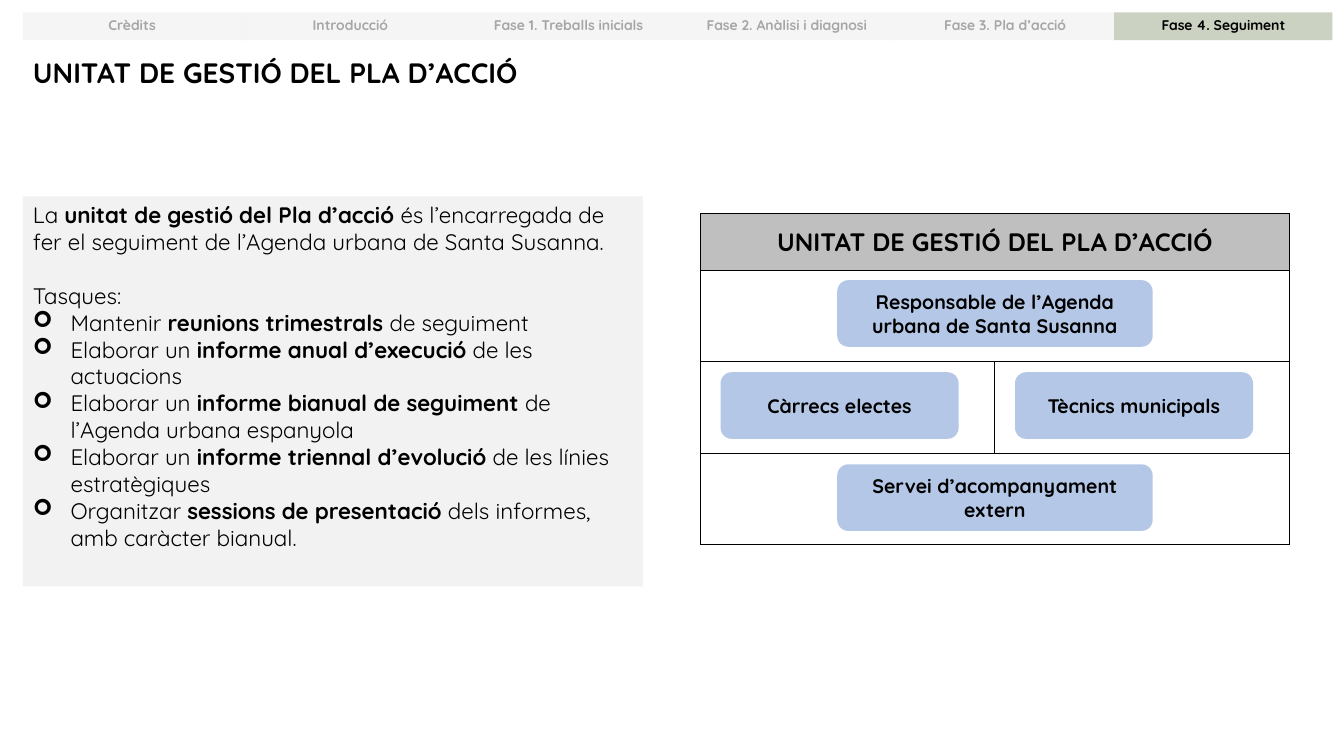
from dataclasses import dataclass

from lxml import etree
from pptx import Presentation
from pptx.dml.color import RGBColor
from pptx.enum.shapes import MSO_SHAPE
from pptx.enum.text import MSO_ANCHOR, PP_ALIGN
from pptx.oxml.ns import qn
from pptx.util import Cm, Pt

RECT, ROUND = MSO_SHAPE.RECTANGLE, MSO_SHAPE.ROUNDED_RECTANGLE
LEFT, CENTER = PP_ALIGN.LEFT, PP_ALIGN.CENTER
TOP, MIDDLE = MSO_ANCHOR.TOP, MSO_ANCHOR.MIDDLE
FONT = "Quicksand"
COLORS = {
    "text": "000000",
    "muted": "A6A6A6",
    "tab": "D9D9D9",
    "active": "374E0A",
    "panel": "F2F2F2",
    "head": "BFBFBF",
    "chip": "B4C7E7",
}
TITLE = "UNITAT DE GESTIÓ DEL PLA D’ACCIÓ"
TABS = (
    "Crèdits",
    "Introducció",
    "Fase 1. Treballs inicials",
    "Fase 2. Anàlisi i diagnosi",
    "Fase 3. Pla d’acció",
    "Fase 4. Seguiment",
)
MARGIN = 0.58
TAB_WIDTH = 5.5
TABLE_LEFT, TABLE_TOP = 17.65, 5.39
COL_WIDTH, HEAD_HEIGHT, ROW_HEIGHT = 7.42, 1.43, 2.3
CHIP_TOP, CHIP_STEP, CHIP_HEIGHT = 7.06, 2.32, 1.68


@dataclass
class Task:
    verb: str
    key: str
    rest: str


@dataclass
class Chip:
    text: str
    left: float
    width: float
    row: int


TASKS = (
    Task("Mantenir ", "reunions trimestrals ", "de seguiment"),
    Task("Elaborar un ", "informe anual d’execució ", "de les actuacions"),
    Task("Elaborar un ", "informe bianual de seguiment ",
         "de l’Agenda urbana espanyola"),
    Task("Elaborar un ", "informe triennal d’evolució ",
         "de les línies estratègiques"),
    Task("Organitzar ", "sessions de presentació ",
         "dels informes, amb caràcter bianual."),
)
CHIPS = (
    Chip("Responsable de l’Agenda urbana de Santa Susanna", 21.1, 7.95, 0),
    Chip("Càrrecs electes", 18.16, 6, 1),
    Chip("Tècnics municipals", 25.58, 6, 1),
    Chip("Servei d’acompanyament extern", 21.1, 7.95, 2),
)


def add_run(para, text: str, size: float, bold: bool = True,
            color: str = "text") -> None:
    run = para.add_run()
    run.text = text
    run.font.name = FONT
    run.font.size = Pt(size)
    run.font.bold = bold
    run.font.color.rgb = RGBColor.from_string(COLORS[color])


def add_box(slide, kind, left: float, top: float, width: float,
            height: float, color: str, anchor=MIDDLE):
    box = slide.shapes.add_shape(kind, Cm(left), Cm(top), Cm(width), Cm(height))
    box.shadow.inherit = False
    box.fill.solid()
    box.fill.fore_color.rgb = RGBColor.from_string(COLORS[color])
    box.line.fill.background()
    box.text_frame.word_wrap = True
    box.text_frame.vertical_anchor = anchor
    box.text_frame.paragraphs[0].alignment = CENTER
    return box


def add_tabs(slide) -> None:
    for i, name in enumerate(TABS):
        active = i == len(TABS) - 1
        box = add_box(slide, RECT, MARGIN + i * TAB_WIDTH, 0.31, TAB_WIDTH, 0.7,
                      "active" if active else "tab")
        tint = box.fill._xPr.find(".//" + qn("a:srgbClr"))
        etree.SubElement(tint, qn("a:alpha"), val="25000")
        para = box.text_frame.paragraphs[0]
        para.line_spacing = 0.9
        para.space_before = Pt(10)
        add_run(para, name, 10, color="text" if active else "muted")


def add_title(slide) -> None:
    box = slide.shapes.add_textbox(Cm(MARGIN), Cm(1.27), Cm(19.91), Cm(1.11))
    box.text_frame.word_wrap = True
    add_run(box.text_frame.paragraphs[0], TITLE, 20)


def add_bullet(para) -> None:
    props = para._p.get_or_add_pPr()
    props.set("marL", str(Cm(0.95)))
    props.set("indent", str(-Cm(0.95)))
    etree.SubElement(props, qn("a:buFont"), typeface="Wingdings")
    etree.SubElement(props, qn("a:buChar"), char="➢")


def add_panel(slide) -> None:
    box = add_box(slide, RECT, MARGIN, 4.95, 15.62, 9.83, "panel", TOP)
    frame = box.text_frame
    intro = frame.paragraphs[0]
    intro.alignment = LEFT
    add_run(intro, "La ", 16, False)
    add_run(intro, "unitat de gestió del Pla d’acció ", 16)
    add_run(intro, "és l’encarregada de fer el seguiment de l’Agenda urbana "
            "de Santa Susanna.", 16, False)
    label = frame.add_paragraph()
    label.alignment = LEFT
    label.space_before = Pt(19.2)
    add_run(label, "Tasques:", 16, False)
    for task in TASKS:
        para = frame.add_paragraph()
        para.alignment = LEFT
        add_bullet(para)
        add_run(para, task.verb, 16, False)
        add_run(para, task.key, 16)
        add_run(para, task.rest, 16, False)


def add_border(cell) -> None:
    props = cell._tc.get_or_add_tcPr()
    for i, side in enumerate(("lnL", "lnR", "lnT", "lnB")):
        line = etree.Element(qn("a:" + side), w=str(Pt(1)))
        fill = etree.SubElement(line, qn("a:solidFill"))
        etree.SubElement(fill, qn("a:srgbClr"), val=COLORS["text"])
        props.insert(i, line)


def add_table(slide) -> None:
    frame = slide.shapes.add_table(
        4, 2, Cm(TABLE_LEFT), Cm(TABLE_TOP), Cm(2 * COL_WIDTH),
        Cm(HEAD_HEIGHT + 3 * ROW_HEIGHT))
    table = frame.table
    table.first_row = table.horz_banding = False
    for col in table.columns:
        col.width = Cm(COL_WIDTH)
    for i, row in enumerate(table.rows):
        row.height = Cm(ROW_HEIGHT if i else HEAD_HEIGHT)
        for cell in row.cells:
            cell.fill.background()
            add_border(cell)
    for i in (0, 1, 3):
        table.cell(i, 0).merge(table.cell(i, 1))
    head = table.cell(0, 0)
    head.fill.solid()
    head.fill.fore_color.rgb = RGBColor.from_string(COLORS["head"])
    head.vertical_anchor = MIDDLE
    para = head.text_frame.paragraphs[0]
    para.alignment = CENTER
    add_run(para, TITLE, 18)


def add_chips(slide) -> None:
    for chip in CHIPS:
        box = add_box(slide, ROUND, chip.left, CHIP_TOP + chip.row * CHIP_STEP,
                      chip.width, CHIP_HEIGHT, "chip")
        add_run(box.text_frame.paragraphs[0], chip.text, 14)


def main() -> None:
    deck = Presentation()
    deck.slide_width, deck.slide_height = Cm(33.87), Cm(19.05)
    slide = deck.slides.add_slide(deck.slide_layouts[6])
    add_tabs(slide)
    add_title(slide)
    add_panel(slide)
    add_table(slide)
    add_chips(slide)
    deck.save("out.pptx")


if __name__ == "__main__":
    main()
